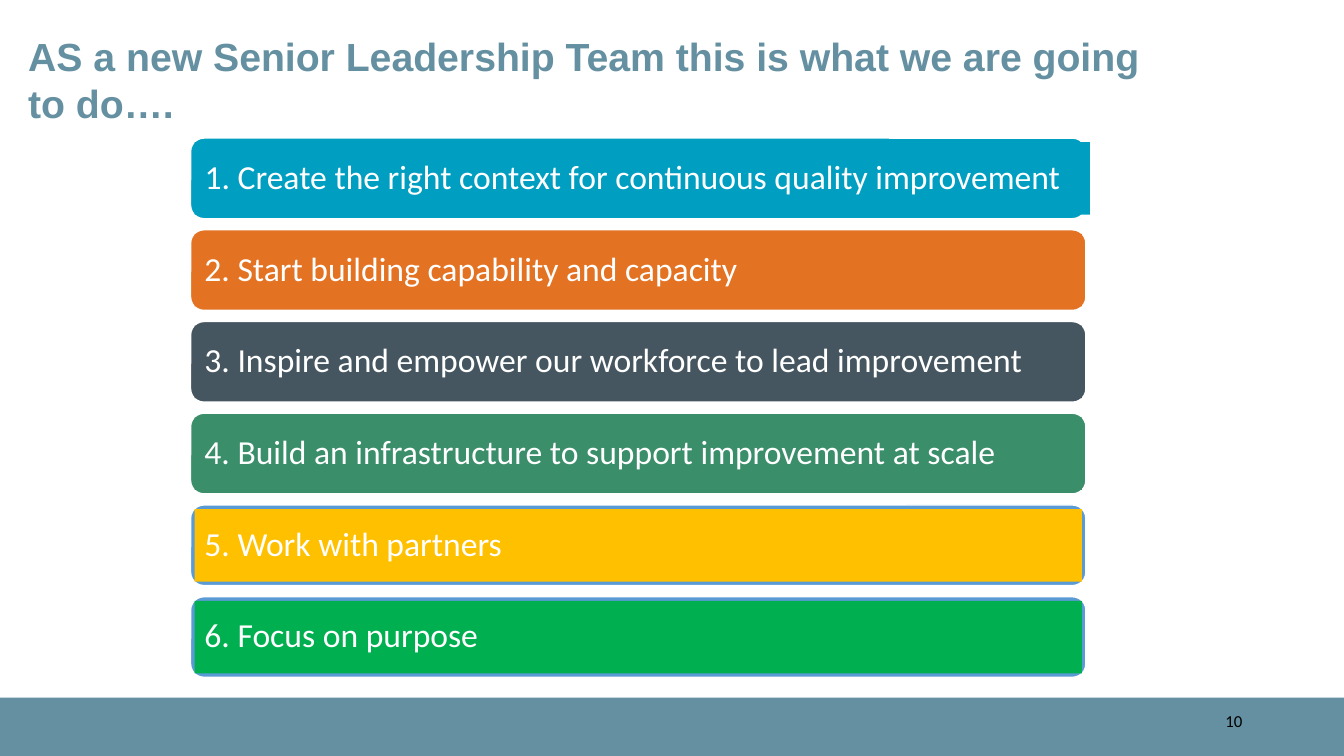
from pptx import Presentation
from pptx.dml.color import RGBColor
from pptx.enum.shapes import MSO_SHAPE
from pptx.enum.text import MSO_ANCHOR, MSO_AUTO_SIZE, PP_ALIGN
from pptx.util import Inches, Pt

RECTANGLE = MSO_SHAPE.RECTANGLE
ROUNDED = MSO_SHAPE.ROUNDED_RECTANGLE
MIDDLE = MSO_ANCHOR.MIDDLE
LEFT, RIGHT = PP_ALIGN.LEFT, PP_ALIGN.RIGHT
NO_AUTOFIT = MSO_AUTO_SIZE.NONE

WHITE = RGBColor(0xFF, 0xFF, 0xFF)
BLACK = RGBColor(0x00, 0x00, 0x00)
SLATE = RGBColor(0x64, 0x90, 0xA1)
CYAN = RGBColor(0x00, 0x9F, 0xC2)
ORANGE = RGBColor(0xE3, 0x72, 0x22)
CHARCOAL = RGBColor(0x45, 0x56, 0x60)
SEA_GREEN = RGBColor(0x3A, 0x8E, 0x6A)
BLUE = RGBColor(0x5B, 0x9B, 0xD5)
AMBER = RGBColor(0xFF, 0xC0, 0x00)
GREEN = RGBColor(0x00, 0xB0, 0x50)

# text, bar colour, label colour, label width
PRIORITIES = [
    ("1. Create the right context for continuous quality improvement", CYAN, CYAN, 8.88),
    ("2. Start building capability and capacity", ORANGE, ORANGE, 8.8),
    ("3. Inspire and empower our workforce to lead improvement", CHARCOAL, CHARCOAL, 8.8),
    ("4. Build an infrastructure to support improvement at scale", SEA_GREEN, SEA_GREEN, 8.8),
    ("5. Work with partners", BLUE, AMBER, 8.8),
    ("6. Focus on purpose", BLUE, GREEN, 8.8),
]
BAR_TOP, BAR_PITCH = 1.37, 0.91


def add_block(shapes, kind, left, top, width, height, color):
    block = shapes.add_shape(kind, Inches(left), Inches(top), Inches(width), Inches(height))
    block.shadow.inherit = False
    block.fill.solid()
    block.fill.fore_color.rgb = color
    block.line.fill.background()
    return block


def write_text(frame, text, alignment, font_name, size, color, bold=False):
    frame.word_wrap = True
    frame.vertical_anchor = MIDDLE
    paragraph = frame.paragraphs[0]
    paragraph.alignment = alignment
    run = paragraph.add_run()
    run.text = text
    run.font.name = font_name
    run.font.size = Pt(size)
    run.font.color.rgb = color
    run.font.bold = bold


presentation = Presentation()
presentation.slide_width = Inches(13.33)
presentation.slide_height = Inches(7.5)
slide = presentation.slides.add_slide(presentation.slide_layouts[5])

# Title
title = slide.shapes.title
title.left, title.top = Inches(0.18), Inches(0.25)
title.width, title.height = Inches(11.55), Inches(1.08)
title.text_frame.auto_size = NO_AUTOFIT
write_text(title.text_frame, "AS a new Senior Leadership Team this is what we are going to do….",
           LEFT, "Arial", 28, SLATE, bold=True)

# Footer band and slide number
add_block(slide.shapes, RECTANGLE, 0, 6.92, 13.33, 0.58, SLATE)
number_box = slide.shapes.add_textbox(Inches(9.42), Inches(6.95), Inches(3), Inches(0.4))
write_text(number_box.text_frame, "10", RIGHT, "Calibri", 12, BLACK)

# Priority bars
priorities = slide.shapes.add_group_shape()
for index, (text, bar_color, label_color, label_width) in enumerate(PRIORITIES):
    top = BAR_TOP + index * BAR_PITCH
    bar = add_block(priorities.shapes, ROUNDED, 1.89, top, 8.88, 0.8, bar_color)
    bar.line.color.rgb = WHITE
    bar.line.width = Pt(1)

    label = add_block(priorities.shapes, RECTANGLE, 1.93, top + 0.04, label_width, 0.72, label_color)
    frame = label.text_frame
    frame.margin_left = frame.margin_right = Inches(0.1)
    frame.margin_top = frame.margin_bottom = Inches(0.1)
    write_text(frame, text, LEFT, "Calibri", 24, WHITE)
    frame.paragraphs[0].line_spacing = 0.9

presentation.save("out.pptx")
